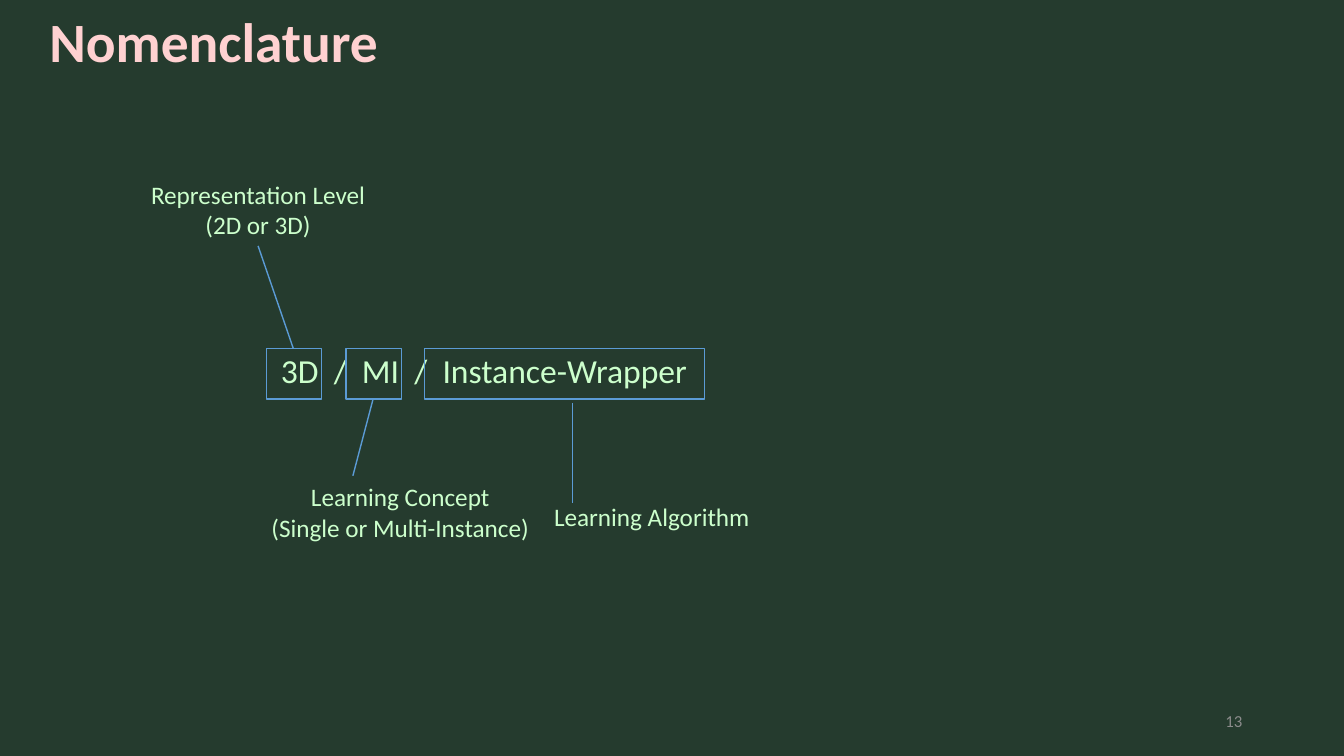
from lxml.etree import SubElement
from pptx import Presentation
from pptx.dml.color import RGBColor
from pptx.enum.shapes import MSO_CONNECTOR, MSO_SHAPE
from pptx.enum.text import MSO_ANCHOR, MSO_AUTO_SIZE, PP_ALIGN
from pptx.oxml.ns import qn
from pptx.util import Inches, Pt

BACK, MINT, PINK, BLUE, GREY = "253B2E", "CCFFCC", "FFD1D1", "5B9BD5", "8C8C8C"

TITLE = "Nomenclature"
NAME = "3D  /  MI  /  Instance-Wrapper"
NAME_AT = (1.24, 3.42, 7.12, 0.5)
PAGE = "13"
PAGE_AT = (9.42, 6.95, 3, 0.4)

# Frames around the parts of the name: left, width
FRAMES = [(2.64, 0.55), (3.43, 0.55), (4.21, 2.78)]
TOP, HIGH = 3.46, 0.5

# Label text, its box, and the line from the frame to the label
LABELS = [
    ("Representation Level\n(2D or 3D)", (1.38, 1.73, 2.36, 0.71),
     (2.91, TOP, 2.56, 2.44)),
    ("Learning Concept\n(Single or Multi-Instance)", (2.39, 4.73, 3.16, 0.71),
     (3.7, TOP + HIGH, 3.5, 4.72)),
    ("Learning Algorithm", (5.28, 4.92, 2.37, 0.4),
     (5.68, 4, 5.68, 4.99)),
]


def color(code):
    return RGBColor.from_string(code)


def write(shape, text, size=18, ink=MINT, bold=False, align=PP_ALIGN.CENTER,
          anchor=MSO_ANCHOR.TOP, space=1.0):
    frame = shape.text_frame
    frame.word_wrap = True
    frame.auto_size = MSO_AUTO_SIZE.NONE
    frame.vertical_anchor = anchor
    frame.text = text
    for para in frame.paragraphs:
        para.alignment = align
        para.line_spacing = space
        for run in para.runs:
            font = run.font
            font.name, font.size, font.bold = "Calibri", Pt(size), bold
            font.color.rgb = color(ink)


def stroke(shape):
    shape.line.color.rgb = color(BLUE)
    shape.line.width = Pt(1)


def main():
    deck = Presentation()
    deck.slide_width, deck.slide_height = Inches(13.33), Inches(7.5)
    slide = deck.slides.add_slide(deck.slide_layouts[5])
    slide.background.fill.solid()
    slide.background.fill.fore_color.rgb = color(BACK)
    shapes = slide.shapes

    title = shapes.title
    title.left, title.top = Inches(0.39), Inches(0.2)
    title.width, title.height = Inches(9.19), Inches(0.48)
    write(title, TITLE, size=39.6, ink=PINK, bold=True, align=PP_ALIGN.LEFT,
          anchor=MSO_ANCHOR.MIDDLE, space=0.9)

    write(shapes.add_textbox(*map(Inches, NAME_AT)), NAME, size=24)

    for left, width in FRAMES:
        box = shapes.add_shape(MSO_SHAPE.RECTANGLE,
                               *map(Inches, (left, TOP, width, HIGH)))
        box.shadow.inherit = False
        box.fill.background()
        stroke(box)

    for text, area, ends in LABELS:
        line = shapes.add_connector(MSO_CONNECTOR.STRAIGHT, *map(Inches, ends))
        stroke(line)
        SubElement(line._element.spPr, qn("a:effectLst"))
        write(shapes.add_textbox(*map(Inches, area)), text)

    write(shapes.add_textbox(*map(Inches, PAGE_AT)), PAGE, size=12, ink=GREY,
          align=PP_ALIGN.RIGHT, anchor=MSO_ANCHOR.MIDDLE)

    deck.save("out.pptx")


if __name__ == "__main__":
    main()
